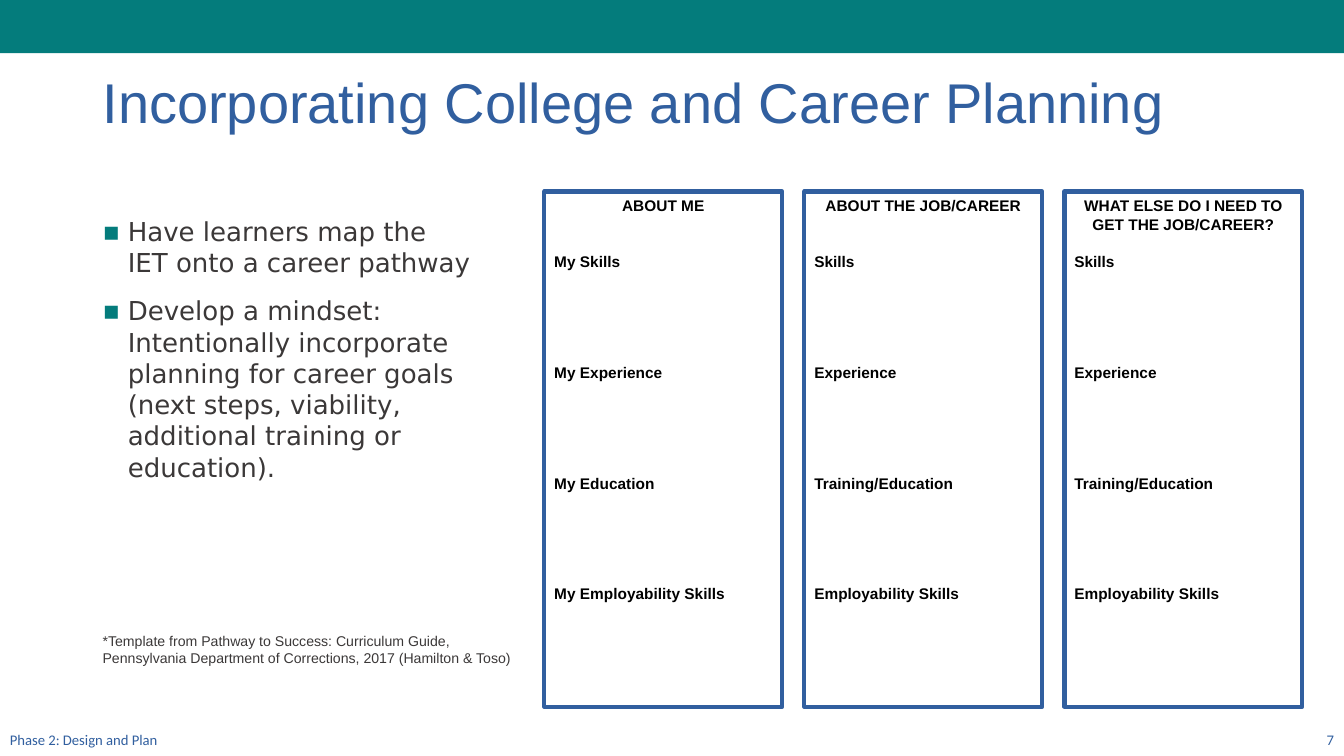
from lxml import etree
from pptx import Presentation
from pptx.dml.color import RGBColor
from pptx.enum.shapes import MSO_SHAPE as Form
from pptx.enum.text import MSO_ANCHOR as Anchor, PP_ALIGN as Align
from pptx.oxml.ns import qn
from pptx.util import Pt

TEAL, BLUE, GREY = "047C7C", "315F9F", "3B3838"
WHITE, BLACK = "FFFFFF", "000000"
LINE = 13.2  # line pitch in the cards

POINTS = [
    "Have learners map the\vIET onto a career pathway",
    "Develop a mindset: Intentionally incorporate planning for career goals "
    "(next steps, viability, additional training or education).",
]
NOTE = ("*Template from Pathway to Success: Curriculum Guide, "
        "Pennsylvania Department of Corrections, 2017 (Hamilton & Toso)")
NEEDS = ["Skills", "Experience", "Training/Education", "Employability Skills"]
# Heading, lines it takes up, topics
CARDS = [
    ("ABOUT ME", 1, ["My Skills", "My Experience", "My Education",
                     "My Employability Skills"]),
    ("ABOUT THE JOB/CAREER", 1, NEEDS),
    ("WHAT ELSE DO I NEED TO GET THE JOB/CAREER?", 2, NEEDS),
]


def color(code):
    return RGBColor.from_string(code)


def style(para, size, font, code, bold=False):
    for run in para.runs:
        run.font.size = Pt(size)
        run.font.name = font
        run.font.bold = bold
        run.font.color.rgb = color(code)


def add_para(frame, first, text):
    para = frame.paragraphs[0] if first else frame.add_paragraph()
    para.text = text
    return para


def add_rect(slide, x, y, w, h, fill, line=None):
    rect = slide.shapes.add_shape(Form.RECTANGLE, Pt(x), Pt(y), Pt(w), Pt(h))
    rect.shadow.inherit = False
    rect.fill.solid()
    rect.fill.fore_color.rgb = color(fill)
    if line:
        rect.line.color.rgb = color(line)
        rect.line.width = Pt(3)
    else:
        rect.line.fill.background()
    return rect


def add_box(slide, x, y, w, h, anchor=Anchor.TOP):
    frame = slide.shapes.add_textbox(Pt(x), Pt(y), Pt(w), Pt(h)).text_frame
    frame.word_wrap = True
    frame.vertical_anchor = anchor
    return frame


def add_label(slide, x, y, w, h, text, size, font, anchor, align=Align.LEFT):
    frame = add_box(slide, x, y, w, h, anchor)
    frame.text = text
    para = frame.paragraphs[0]
    para.alignment = align
    style(para, size, font, BLUE)
    return para


def add_bullet(para):
    props = para._p.get_or_add_pPr()
    props.set("marL", str(Pt(18)))
    props.set("indent", str(-Pt(18)))
    tint = etree.SubElement(props, qn("a:buClr"))
    etree.SubElement(tint, qn("a:srgbClr")).set("val", TEAL)
    etree.SubElement(props, qn("a:buFont")).set("typeface", "DejaVu Sans")
    etree.SubElement(props, qn("a:buChar")).set("char", "▪")


def add_points(slide):
    frame = add_box(slide, 66.2, 150.5, 309, 342.7)
    for i, text in enumerate(POINTS):
        para = add_para(frame, i == 0, text)
        add_bullet(para)
        para.line_spacing = Pt(22.3)
        para.space_before = Pt(6 if i else 0)
        para.space_after = Pt(6)
        style(para, 18.6, "DejaVu Sans", GREY)
    # Source note, set well below the points
    para = add_para(frame, False, NOTE)
    para.space_before = Pt(101)
    style(para, 10.1, "Arial", GREY)


def add_card(slide, x, head, lines, topics):
    card = add_rect(slide, x, 136.8, 170, 368, WHITE, BLUE)
    frame = card.text_frame
    frame.word_wrap = True
    frame.vertical_anchor = Anchor.TOP
    for i, text in enumerate([head] + topics):
        para = add_para(frame, i == 0, text)
        para.alignment = Align.LEFT if i else Align.CENTER
        para.line_spacing = Pt(LINE)
        gap = (0, 3 - lines)[i] if i < 2 else 5
        para.space_before = Pt(gap * LINE)
        style(para, 11, "Arial", BLACK, True)


def main():
    deck = Presentation()
    deck.slide_width, deck.slide_height = Pt(960), Pt(540)
    slide = deck.slides.add_slide(deck.slide_layouts[6])

    # Top band and title
    add_rect(slide, 0, 0, 960, 38, TEAL)
    title = add_label(slide, 66.2, 47.5, 847.4, 55.4,
                      "Incorporating College and Career Planning",
                      40, "Arial", Anchor.MIDDLE)
    title.line_spacing = 0.9

    # Points on the left, cards on the right
    add_points(slide)
    for i, (head, lines, topics) in enumerate(CARDS):
        add_card(slide, 388.8 + i * 185.75, head, lines, topics)

    # Footer
    add_label(slide, 0, 516.2, 324, 22.3, "Phase 2: Design and Plan",
              10.5, "Calibri", Anchor.BOTTOM)
    add_label(slide, 744, 516.2, 216, 22.3, "7",
              10.5, "Calibri", Anchor.BOTTOM, Align.RIGHT)

    deck.save("out.pptx")


if __name__ == "__main__":
    main()
